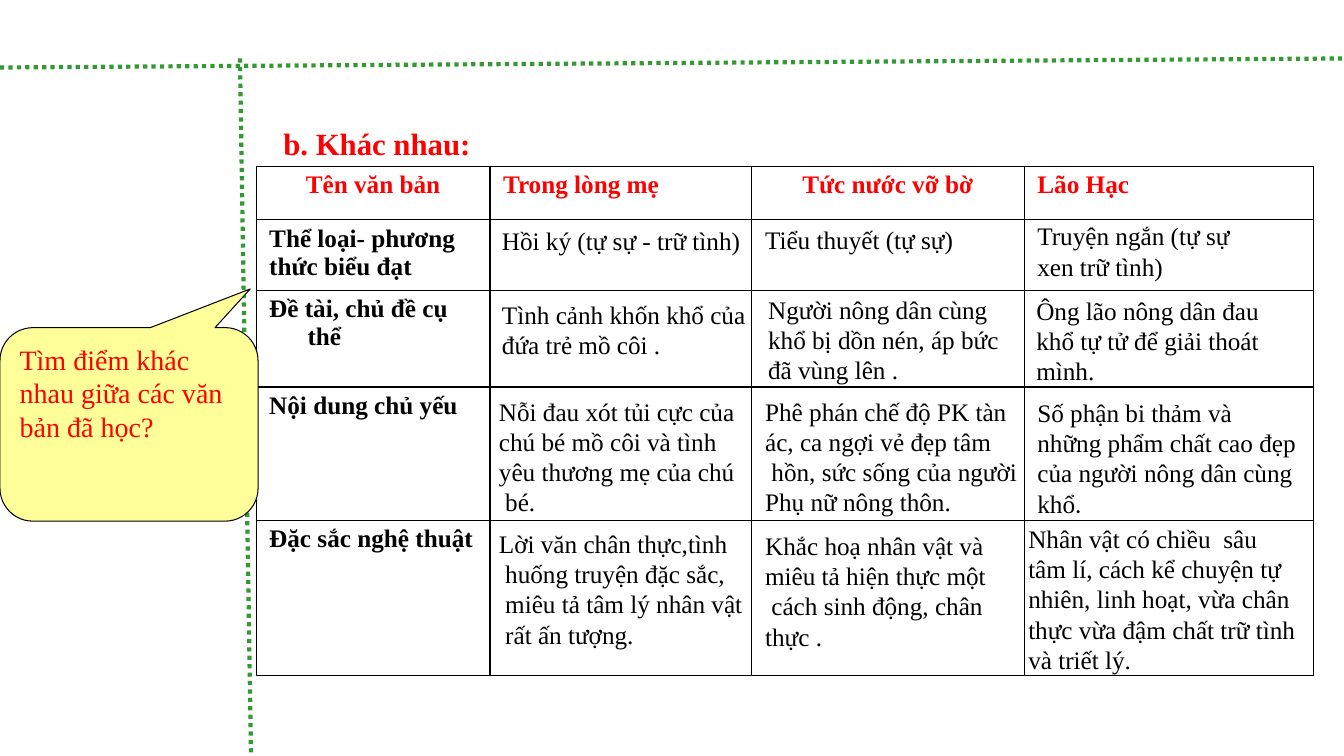
"""Build a slide comparing three literary texts in a table."""
from dataclasses import dataclass

from lxml import etree
from pptx import Presentation
from pptx.dml.color import RGBColor
from pptx.enum.dml import MSO_LINE
from pptx.enum.shapes import MSO_CONNECTOR, MSO_SHAPE
from pptx.enum.text import MSO_ANCHOR, MSO_AUTO_SIZE, PP_ALIGN
from pptx.oxml.ns import qn
from pptx.slide import Slide
from pptx.table import _Cell
from pptx.text.text import TextFrame, _Paragraph
from pptx.util import Inches, Pt

RED = RGBColor(0xFF, 0x00, 0x00)
BLACK = RGBColor(0x00, 0x00, 0x00)
GREEN = RGBColor(0x33, 0x99, 0x33)
YELLOW = RGBColor(0xFF, 0xFF, 0x99)
SERIF = "Times New Roman"
SANS = "Calibri"
DOTTED = MSO_LINE.ROUND_DOT
STRAIGHT = MSO_CONNECTOR.STRAIGHT
CALLOUT = MSO_SHAPE.ROUNDED_RECTANGULAR_CALLOUT
TOP = MSO_ANCHOR.TOP
LEFT = PP_ALIGN.LEFT
CENTER = PP_ALIGN.CENTER
GROW = MSO_AUTO_SIZE.SHAPE_TO_FIT_TEXT
TITLE_ONLY = 5
HANGING = Inches(0.38)
COLUMN_WIDTHS = (2.32, 2.59, 2.71, 2.87)
ROW_HEIGHTS = (0.53, 0.7, 0.96, 1.32, 1.54)


@dataclass(frozen=True)
class Guide:
    """A dotted guide line, in inches."""
    x1: float
    y1: float
    x2: float
    y2: float


@dataclass(frozen=True)
class Heading:
    """The text of one row or column heading."""
    row: int
    column: int
    lines: tuple[str, ...]
    align: PP_ALIGN = LEFT


@dataclass(frozen=True)
class Note:
    """A text laid over the table, in inches."""
    left: float
    top: float
    width: float
    height: float
    lines: tuple[str, ...]
    ending: str = ""


GUIDES = (Guide(0, 0.67, 13.33, 0.58), Guide(2.38, 0.58, 2.49, 7.5))
HEADINGS = (
    Heading(0, 0, ("Tên văn bản",), CENTER),
    Heading(0, 1, ("Trong lòng mẹ",)),
    Heading(0, 2, ("Tức nước vỡ bờ",), CENTER),
    Heading(0, 3, ("Lão Hạc",)),
    Heading(1, 0, ("Thể loại- phương", "thức biểu đạt")),
    Heading(2, 0, ("Đề tài, chủ đề cụ thể",)),
    Heading(3, 0, ("Nội dung chủ yếu",)),
    Heading(4, 0, ("Đặc sắc nghệ thuật",)),
)
NOTES = (
    Note(4.88, 2.19, 2.94, 0.74, ("Hồi ký (tự sự - trữ tình)",)),
    Note(7.49, 2.18, 2.5, 0.74, ("Tiểu thuyết (tự sự)",)),
    Note(10.19, 2.14, 2.47, 0.71, ("Truyện ngắn (tự sự xen trữ tình)",)),
    Note(4.88, 2.92, 2.81, 0.71, ("Tình cảnh khốn khổ của đứa trẻ mồ côi .",)),
    Note(7.52, 2.87, 2.54, 1.01,
         ("Người nông dân cùng khổ bị dồn nén, áp bức đã vùng lên .",)),
    Note(10.18, 2.88, 2.82, 1.01,
         ("Ông lão nông dân đau", "khổ tự tử để giải thoát mình.")),
    Note(4.85, 3.88, 3.31, 1.31,
         ("Nỗi đau xót tủi cực của", "chú bé mồ côi và tình",
          "yêu thương mẹ của chú", " bé.")),
    Note(7.49, 3.88, 3.78, 1.31,
         ("Phê phán chế độ PK tàn", "ác, ca ngợi vẻ đẹp tâm",
          " hồn, sức sống của người", "Phụ nữ nông thôn.")),
    Note(10.19, 3.89, 2.81, 1.31,
         ("Số phận bi thảm và những phẩm chất cao đẹp "
          "của người nông dân cùng khổ",), "."),
    Note(4.85, 5.19, 3.35, 1.31,
         ("Lời văn chân thực,tình", " huống truyện đặc sắc,",
          " miêu tả tâm lý nhân vật", " rất ấn tượng.")),
    Note(7.49, 5.21, 2.65, 1.31,
         ("Khắc hoạ nhân vật và", "miêu tả hiện thực một",
          " cách sinh động, chân", "thực .")),
    Note(10.1, 5.14, 2.88, 1.62,
         ("Nhân vật có chiều  sâu tâm lí, cách kể chuyện tự nhiên, linh hoạt, "
          "vừa chân thực vừa đậm chất trữ tình và triết lý.",)),
)


def add_span(para: _Paragraph, text: str, size: float, color: RGBColor,
             bold: bool = False, font: str = SERIF) -> None:
    """Append one formatted run."""
    span = para.add_run()
    span.text = text
    span.font.name = font
    span.font.size = Pt(size)
    span.font.bold = bold
    span.font.color.rgb = color


def write_lines(frame: TextFrame, lines: tuple[str, ...], size: float, color: RGBColor,
                bold: bool = False, align: PP_ALIGN = LEFT) -> None:
    """Write one paragraph per line."""
    for index, line in enumerate(lines):
        para = frame.add_paragraph() if index else frame.paragraphs[0]
        para.alignment = align
        add_span(para, line, size, color, bold)


def add_guide(page: Slide, guide: Guide) -> None:
    """Draw a dotted green line."""
    line = page.shapes.add_connector(STRAIGHT, Inches(guide.x1), Inches(guide.y1),
                                     Inches(guide.x2), Inches(guide.y2))
    line.line.color.rgb = GREEN
    line.line.width = Pt(3)
    line.line.dash_style = DOTTED
    etree.SubElement(line._element.spPr, qn("a:effectLst"))


def format_cell(cell: _Cell) -> None:
    """Give a cell its margins, black borders and no fill."""
    cell.margin_left = cell.margin_right = Inches(0.13)
    cell.margin_top = cell.margin_bottom = Inches(0.05)
    properties = cell._tc.get_or_add_tcPr()
    for side in ("a:lnL", "a:lnR", "a:lnT", "a:lnB"):
        border = etree.SubElement(properties, qn(side), w=str(Pt(1)))
        paint = etree.SubElement(border, qn("a:solidFill"))
        etree.SubElement(paint, qn("a:srgbClr"), val=str(BLACK))
    cell.fill.background()


def add_comparison(page: Slide) -> None:
    """Draw the table with its headings."""
    frame = page.shapes.add_table(len(ROW_HEIGHTS), len(COLUMN_WIDTHS),
                                  Inches(2.54), Inches(1.65),
                                  Inches(sum(COLUMN_WIDTHS)), Inches(sum(ROW_HEIGHTS)))
    table = frame.table
    table.first_row = table.horz_banding = False
    for column, width in zip(table.columns, COLUMN_WIDTHS):
        column.width = Inches(width)
    for row, height in zip(table.rows, ROW_HEIGHTS):
        row.height = Inches(height)
    for cell in table.iter_cells():
        format_cell(cell)
    for heading in HEADINGS:
        text = table.cell(heading.row, heading.column).text_frame
        color = BLACK if heading.row else RED
        write_lines(text, heading.lines, 18, color, True, heading.align)
        for para in text.paragraphs:
            properties = para._p.get_or_add_pPr()
            properties.set("marL", str(HANGING))
            properties.set("indent", str(-HANGING))


def add_question(page: Slide) -> None:
    """Draw the yellow callout with the question."""
    box = page.shapes.add_shape(CALLOUT, Inches(0.32), Inches(2.93),
                                Inches(1.92), Inches(2.56))
    box.rotation = 270
    for index, value in enumerate((0.7, 0.47, 0.17)):
        box.adjustments[index] = value
    box.shadow.inherit = False
    box.fill.solid()
    box.fill.fore_color.rgb = YELLOW
    box.line.color.rgb = BLACK
    box.line.width = Pt(0.75)
    frame = box.text_frame
    frame.word_wrap = True
    frame.vertical_anchor = TOP
    box._element.txBody.bodyPr.set("vert", "eaVert")
    write_lines(frame, ("Tìm điểm khác nhau giữa các văn bản đã học?",), 20, RED)


def add_title(page: Slide) -> None:
    """Place and write the title."""
    title = page.shapes.title
    title.left, title.top = Inches(2.71), Inches(1.19)
    title.width, title.height = Inches(2.08), Inches(0.47)
    frame = title.text_frame
    frame.word_wrap = False
    frame.auto_size = GROW
    frame.vertical_anchor = TOP
    write_lines(frame, ("b. Khác nhau:",), 22, RED, True)


def add_note(page: Slide, note: Note) -> None:
    """Write one text over the table."""
    box = page.shapes.add_textbox(Inches(note.left), Inches(note.top),
                                  Inches(note.width), Inches(note.height))
    frame = box.text_frame
    frame.word_wrap = True
    frame.auto_size = GROW
    write_lines(frame, note.lines, 18, BLACK)
    if note.ending:
        add_span(frame.paragraphs[-1], note.ending, 18, BLACK, font=SANS)


def main() -> None:
    """Build and save the deck."""
    deck = Presentation()
    deck.slide_width, deck.slide_height = Inches(13.33), Inches(7.5)
    page = deck.slides.add_slide(deck.slide_layouts[TITLE_ONLY])
    for guide in GUIDES:
        add_guide(page, guide)
    add_comparison(page)
    add_question(page)
    add_title(page)
    for note in NOTES:
        add_note(page, note)
    deck.save("out.pptx")


if __name__ == "__main__":
    main()
